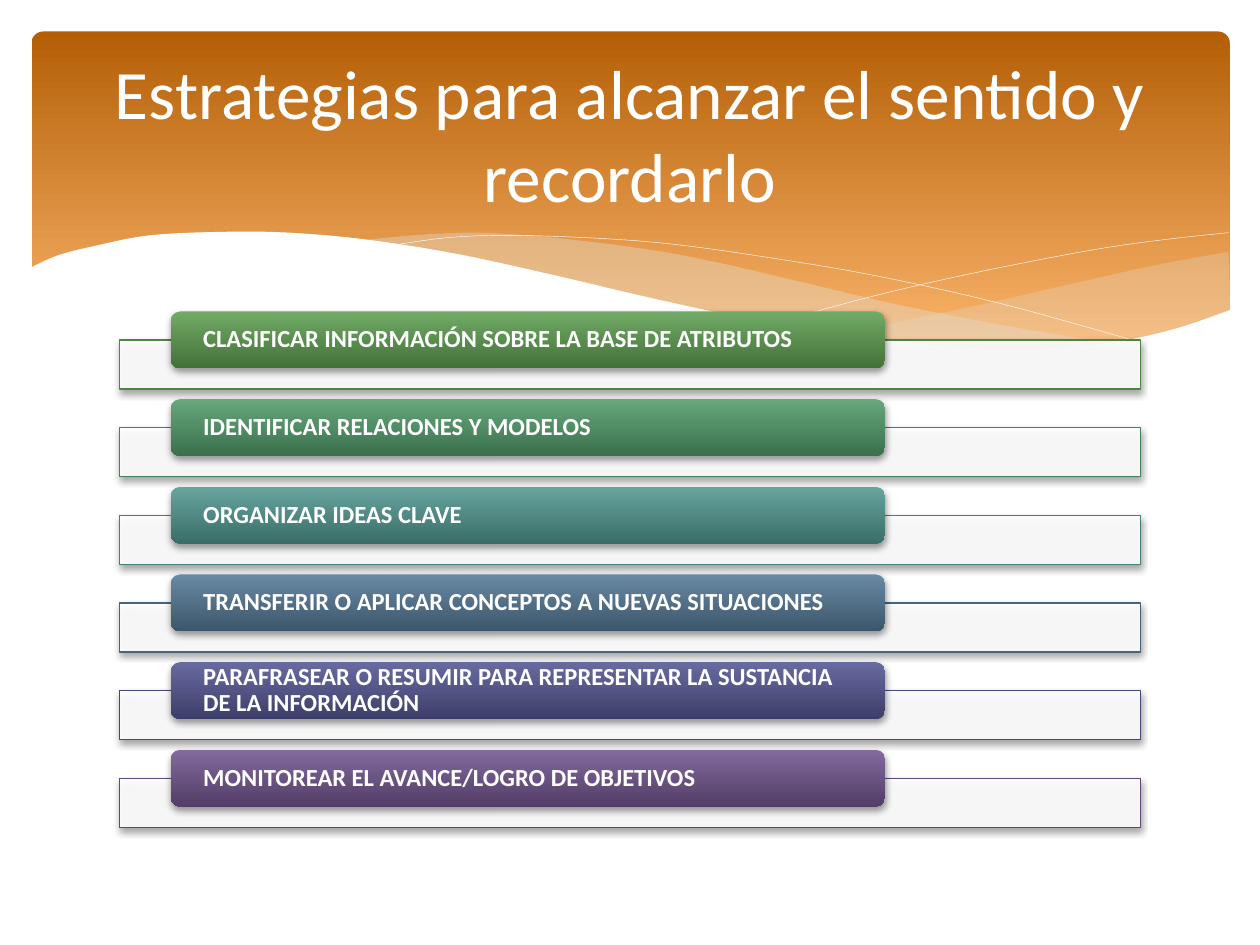
import pptx
import pptx.util
import pptx.dml.color
import pptx.enum.shapes
import pptx.enum.text
import pptx.oxml.ns
import lxml.etree

Pt = pptx.util.Pt
KIND = pptx.enum.shapes.MSO_SHAPE
ALIGN = pptx.enum.text.PP_ALIGN
MIDDLE = pptx.enum.text.MSO_ANCHOR.MIDDLE

RIGHT = [
    [(684, 126), (645, 133), (602, 142.5), (543, 156), (490, 167), (458, 173)],
    [(458, 173), (490, 177), (527, 180.5), (560, 182), (597, 180.5),
     (634, 175.5), (660, 168.5), (685, 160)],
]
MID = [
    [(625, 178.5), (585, 173), (540, 165), (490, 155), (435, 142), (392, 132),
     (352, 124.5), (300, 118), (256, 115), (218, 116.5), (188, 119.5)],
    [(188, 119.5), (228, 125.5), (273, 134), (305, 142), (364, 155),
     (415, 165.5), (461, 173.5), (502, 179), (547, 182), (585, 182),
     (625, 178.5)],
]
FALL = [[(204.5, 122.5), (236, 118), (271, 116.5), (320, 118), (366, 121.5),
         (420, 129), (482, 139.5), (554, 155.5), (635, 178)]]
RISE = [[(423, 167), (482, 151), (541, 137.5), (605.5, 125), (647, 119),
         (684, 115)]]
FRONT = [
    [(685.5, 159), (651.5, 170.5), (612, 178.5), (564.5, 181.5),
     (517.5, 179.5), (463, 173), (399, 162), (344, 150), (304, 140.5),
     (245, 127.5), (192, 119), (147.5, 115), (109.5, 114.5), (67.5, 116.5),
     (36.5, 122.5), (15, 128), (-1.5, 135.5)],
    [(-1.5, 219), (685.5, 219)],
]
ROWS = [
    ("CLASIFICAR INFORMACIÓN SOBRE LA BASE DE ATRIBUTOS",
     "4E8542", "71AA66", "437238"),
    ("IDENTIFICAR RELACIONES Y MODELOS", "43825A", "67A87C", "3A704D"),
    ("ORGANIZAR IDEAS CLAVE", "448079", "67A59E", "3B6D68"),
    ("TRANSFERIR O APLICAR CONCEPTOS A NUEVAS SITUACIONES",
     "46657D", "6888A3", "3C576B"),
    ("PARAFRASEAR O RESUMIR PARA REPRESENTAR LA SUSTANCIA DE LA INFORMACIÓN",
     "47497B", "696BA0", "3D3E69"),
    ("MONITOREAR EL AVANCE/LOGRO DE OBJETIVOS", "604878", "836A9E", "523E67"),
]


def rgb(code):
    return pptx.dml.color.RGBColor.from_string(code)


def sub(node, tag, **attrs):
    return lxml.etree.SubElement(node, pptx.oxml.ns.qn(tag), **attrs)


def tint(shape, code, alpha=100):
    shape.fill.solid()
    shape.fill.fore_color.rgb = rgb(code)
    if alpha < 100:
        node = shape._element.spPr.find(".//" + pptx.oxml.ns.qn("a:srgbClr"))
        sub(node, "a:alpha", val=str(alpha * 1000))


def grade(shape, top, base, end=1):
    shape.fill.gradient()
    shape.fill.gradient_angle = 270
    for stop, code, place in zip(shape.fill.gradient_stops, (top, base), (0, end)):
        stop.color.rgb = rgb(code)
        stop.position = place


def edge(shape, code=None, width=0.75):
    if code is None:
        shape.line.fill.background()
    else:
        shape.line.color.rgb = rgb(code)
        shape.line.width = Pt(width)


def shade(shape):
    effects = shape._element.spPr.find(pptx.oxml.ns.qn("a:effectLst"))
    drop = sub(effects, "a:outerShdw", blurRad=str(Pt(4)), dist=str(Pt(2)),
               dir="5400000", rotWithShape="0")
    sub(sub(drop, "a:srgbClr", val="000000"), "a:alpha", val="38000")


def block(slide, kind, left, top, width, height):
    shape = slide.shapes.add_shape(kind, Pt(left), Pt(top), Pt(width), Pt(height))
    shape.shadow.inherit = False
    return shape


def write(para, text, size, bold=False):
    run = para.add_run()
    run.text = text
    run.font.name = "Calibri"
    run.font.size = Pt(size)
    run.font.bold = bold
    run.font.color.rgb = rgb("FFFFFF")


def smooth(knots, steps=5):
    if len(knots) < 3:
        return knots
    ends = [knots[0]] + knots + [knots[-1]]
    points = [knots[0]]
    for a, b, c, d in zip(ends, ends[1:], ends[2:], ends[3:]):
        for step in range(1, steps + 1):
            t = step / steps
            points.append(tuple(
                q + t / 2 * (r - p + t * (2 * p - 5 * q + 4 * r - s
                                          + t * (3 * q - p - 3 * r + s)))
                for p, q, r, s in zip(a, b, c, d)))
    return points


def wave(slide, left, top, curves, close=True):
    points = [(Pt(left + x), Pt(top + y))
              for curve in curves for x, y in smooth(curve)]
    pen = slide.shapes.build_freeform(*points[0])
    pen.add_line_segments(points[1:], close=close)
    shape = pen.convert_to_shape()
    shape.shadow.inherit = False
    return shape


def banner(slide, left, top, width, height):
    panel = block(slide, KIND.ROUNDED_RECTANGLE, left, top, width, height)
    panel.adjustments[0] = 0.034
    grade(panel, "B45F07", "F9B268", 0.9)
    edge(panel)
    for curves, alpha in ((RIGHT, 29), (MID, 40)):
        shape = wave(slide, left, top, curves)
        tint(shape, "E3DED1", alpha)
        edge(shape)
    for curves in (FALL, RISE):
        shape = wave(slide, left, top, curves, close=False)
        shape.fill.background()
        edge(shape, "FFFFFF", 0.25)
    shape = wave(slide, left, top, FRONT)
    tint(shape, "FFFFFF")
    edge(shape)


def row(slide, left, top, width, text, rim, light, dark):
    bar = block(slide, KIND.RECTANGLE, left, top + 16.3, width, 28)
    tint(bar, "FFFFFF", 90)
    edge(bar, rim)
    shade(bar)
    pill = block(slide, KIND.ROUNDED_RECTANGLE, left + width * 0.05, top,
                 width * 0.7, 32.5)
    grade(pill, light, dark)
    edge(pill)
    shade(pill)
    frame = pill.text_frame
    frame.word_wrap = True
    frame.vertical_anchor = MIDDLE
    frame.margin_left = frame.margin_right = Pt(17)
    frame.margin_top = frame.margin_bottom = 0
    para = frame.paragraphs[0]
    para.alignment = ALIGN.LEFT
    para.line_spacing = 0.9
    write(para, text, 14, True)


def stack(slide, left, top, width, height):
    pitch = height / len(ROWS)
    for i, item in enumerate(ROWS):
        row(slide, left, top + i * pitch, width, *item)


def head(slide, left, top, width, height):
    title = slide.shapes.title
    title.left, title.top = Pt(left), Pt(top)
    title.width, title.height = Pt(width), Pt(height)
    frame = title.text_frame
    frame.word_wrap = True
    frame.auto_size = pptx.enum.text.MSO_AUTO_SIZE.NONE
    frame.vertical_anchor = MIDDLE
    para = frame.paragraphs[0]
    para.alignment = ALIGN.CENTER
    write(para, "Estrategias para alcanzar el sentido y recordarlo", 39.6)
    slide.shapes._spTree.append(title._element)


def main():
    deck = pptx.Presentation()
    deck.slide_width, deck.slide_height = Pt(720), Pt(540)
    slide = deck.slides.add_slide(deck.slide_layouts[5])
    banner(slide, 18, 18, 684.72, 194.4)
    stack(slide, 68.4, 178, 583.2, 300.5)
    head(slide, 36, 27, 648, 98.6)
    deck.save("out.pptx")


if __name__ == "__main__":
    main()
